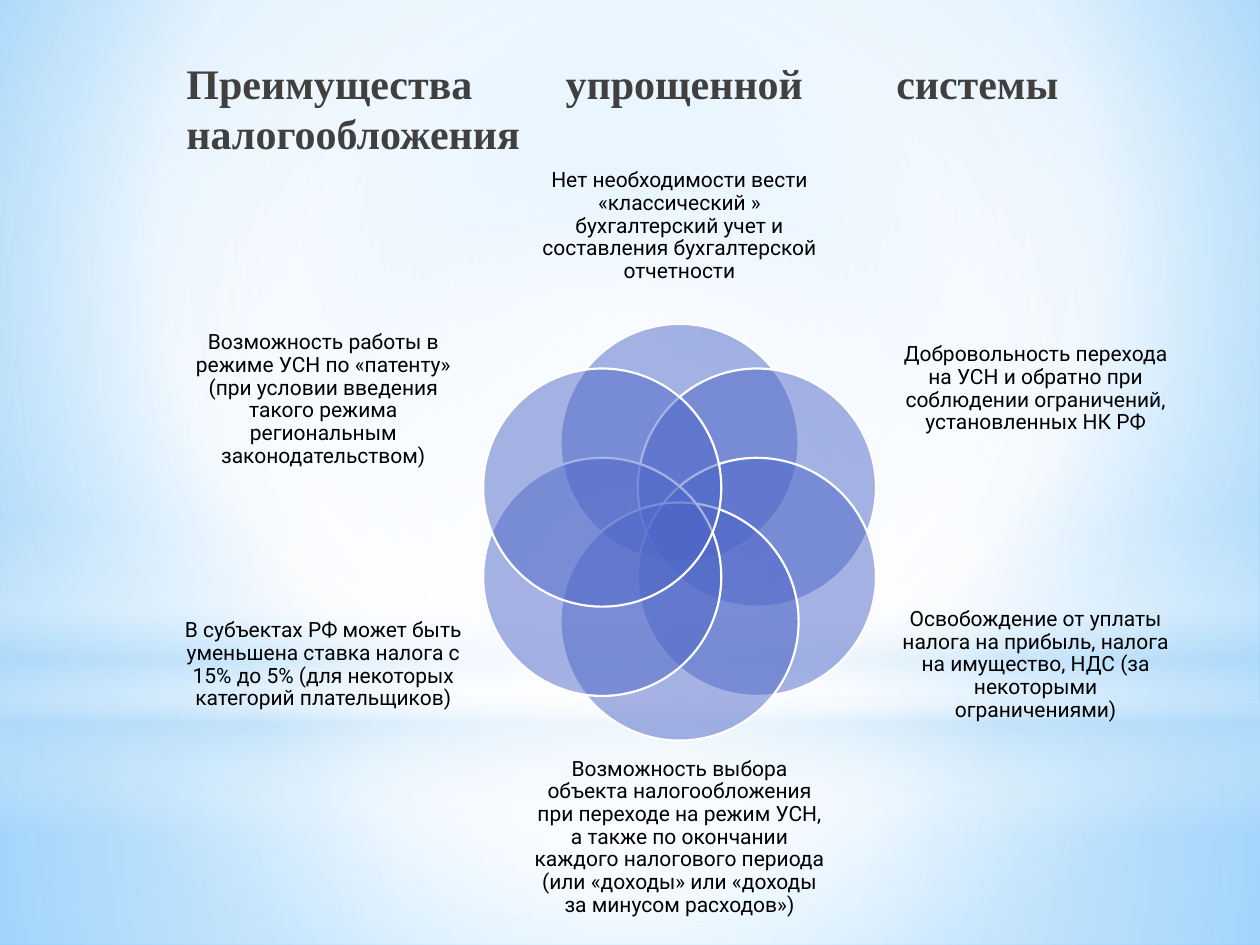
from math import cos, radians, sin

from lxml.etree import SubElement
from pptx import Presentation
from pptx.dml.color import RGBColor
from pptx.enum.shapes import MSO_SHAPE
from pptx.enum.text import MSO_ANCHOR, PP_ALIGN
from pptx.oxml import parse_xml
from pptx.oxml.ns import nsdecls, qn
from pptx.util import Cm, Pt

COLORS = {
    "white": "FFFFFF", "sky": "9ED5FF", "blue": "5BB9FF", "haze": "B4DCFA",
    "petal": "4E67C8", "title": "404040", "text": "000000",
}

# Content
TITLE = "Преимущества упрощенной системы налогообложения"
# Clockwise from the top: text, column (-1, 0, 1), label top and height in cm
ADVANTAGES = [
    ("Нет необходимости вести «классический » бухгалтерский учет и "
     "составления бухгалтерской отчетности", 0, 2.92, 3.28),
    ("Добровольность перехода на УСН и обратно при соблюдении ограничений, "
     "установленных НК РФ", 1, 6.05, 3.58),
    ("Освобождение от уплаты налога на прибыль, налога на имущество, НДС "
     "(за некоторыми ограничениями)", 1, 11.4, 4.01),
    ("Возможность выбора объекта налогообложения при переходе на режим УСН, "
     "а также по окончании каждого налогового периода (или «доходы» или "
     "«доходы за минусом расходов»)", 0, 15.24, 3.28),
    ("В субъектах РФ может быть уменьшена ставка налога с 15% до 5% "
     "(для некоторых категорий плательщиков)", -1, 11.4, 4.01),
    ("Возможность работы в режиме УСН по «патенту» (при условии введения "
     "такого режима региональным законодательством)", -1, 6.05, 4.01),
]

# Backdrop: gradient stops are (position %, colour, opacity %)
CENTRE = (50, 50, 50, 50)
PAGE_STOPS = [(0, "sky", 100), (60, "white", 100), (100, "blue", 100)]
BACKDROP = [  # shape, top, height, stops, focus (None for a vertical gradient)
    (MSO_SHAPE.RECTANGLE, 14.17, 4.88,
     [(0, "white", 91), (37, "white", 76), (100, "haze", 79)], CENTRE),
    (MSO_SHAPE.RECTANGLE, 0, 14.17,
     [(0, "white", 89), (48, "white", 62), (100, "haze", 79)], CENTRE),
    (MSO_SHAPE.RECTANGLE, 10.46, 6.35,
     [(0, "white", 0), (29, "white", 30), (45, "haze", 40),
      (55, "white", 26), (65, "haze", 60), (100, "white", 0)], None),
    (MSO_SHAPE.OVAL, 4.45, 14.17,
     [(0, "white", 100), (56, "white", 0)], CENTRE),
]

# Flower geometry in cm
CENTRE_X, CENTRE_Y = 13.7, 10.73
ORBIT, DIAMETER = 1.8, 4.8
COLUMN_OFFSET = 7.18
LABEL_WIDTHS = {0: 6.02, 1: 5.69, -1: 5.69}


def rgb(name):
    return RGBColor.from_string(COLORS[name])


def set_gradient(fill, element, stops, focus):
    fill.gradient()
    stop_xml = "".join(
        f'<a:gs pos="{position * 1000}"><a:srgbClr val="{COLORS[color]}">'
        f'<a:alpha val="{opacity * 1000}"/></a:srgbClr></a:gs>'
        for position, color, opacity in stops)
    if focus:
        left, top, right, bottom = (side * 1000 for side in focus)
        direction = (f'<a:path path="circle"><a:fillToRect l="{left}" t="{top}" '
                     f'r="{right}" b="{bottom}"/></a:path>')
    else:
        direction = '<a:lin ang="5400000" scaled="0"/>'
    gradient = parse_xml(f'<a:gradFill {nsdecls("a")} rotWithShape="1">'
                         f'<a:gsLst>{stop_xml}</a:gsLst>{direction}</a:gradFill>')
    default = element.find(".//" + qn("a:gradFill"))
    default.getparent().replace(default, gradient)


def add_text(shapes, text, left, top, width, height, font, size, color, align):
    box = shapes.add_textbox(Cm(left), Cm(top), Cm(width), Cm(height))
    frame = box.text_frame
    frame.word_wrap = True
    paragraph = frame.paragraphs[0]
    paragraph.text = text
    paragraph.alignment = align
    paragraph.font.name = font
    paragraph.font.size = Pt(size)
    paragraph.font.color.rgb = rgb(color)
    return frame


def add_petal(shapes, angle):
    left = CENTRE_X + ORBIT * sin(angle) - DIAMETER / 2
    top = CENTRE_Y - ORBIT * cos(angle) - DIAMETER / 2
    petal = shapes.add_shape(MSO_SHAPE.OVAL, Cm(left), Cm(top),
                             Cm(DIAMETER), Cm(DIAMETER))
    petal.shadow.inherit = False
    petal.fill.solid()
    petal.fill.fore_color.rgb = rgb("petal")
    petal_color = petal._element.spPr.find(qn("a:solidFill")).find(qn("a:srgbClr"))
    SubElement(petal_color, qn("a:alpha"), val="50000")
    petal.line.color.rgb = rgb("white")
    petal.line.width = Pt(1.25)


def add_label(shapes, text, column, top, height):
    width = LABEL_WIDTHS[column]
    left = CENTRE_X + column * COLUMN_OFFSET - width / 2
    frame = add_text(shapes, text, left, top, width, height,
                     "Roboto", 12, "text", PP_ALIGN.CENTER)
    frame.vertical_anchor = MSO_ANCHOR.MIDDLE
    frame.margin_left = frame.margin_right = 0
    frame.margin_top = frame.margin_bottom = 0
    frame.paragraphs[0].line_spacing = 0.9


def main():
    deck = Presentation()
    deck.slide_width, deck.slide_height = Cm(25.4), Cm(19.05)
    slide = deck.slides.add_slide(deck.slide_layouts[6])

    # Backdrop
    set_gradient(slide.background.fill, slide._element, PAGE_STOPS, (20, 10, 20, 60))
    for kind, top, height, stops, focus in BACKDROP:
        glow = slide.shapes.add_shape(kind, 0, Cm(top), deck.slide_width, Cm(height))
        glow.shadow.inherit = False
        glow.line.fill.background()
        set_gradient(glow.fill, glow._element, stops, focus)

    # Title
    heading = add_text(slide.shapes, TITLE, 3.51, 0.91, 18.08, 3.18,
                       "Times New Roman", 24, "title", PP_ALIGN.JUSTIFY)
    heading.margin_top = Cm(0.25)
    heading.paragraphs[0].font.bold = True

    # Flower of overlapping circles with a label for each
    flower = slide.shapes.add_group_shape()
    for index, (text, column, top, height) in enumerate(ADVANTAGES):
        add_petal(flower.shapes, radians(index * 360 / len(ADVANTAGES)))
        add_label(flower.shapes, text, column, top, height)

    deck.save("out.pptx")


if __name__ == "__main__":
    main()
